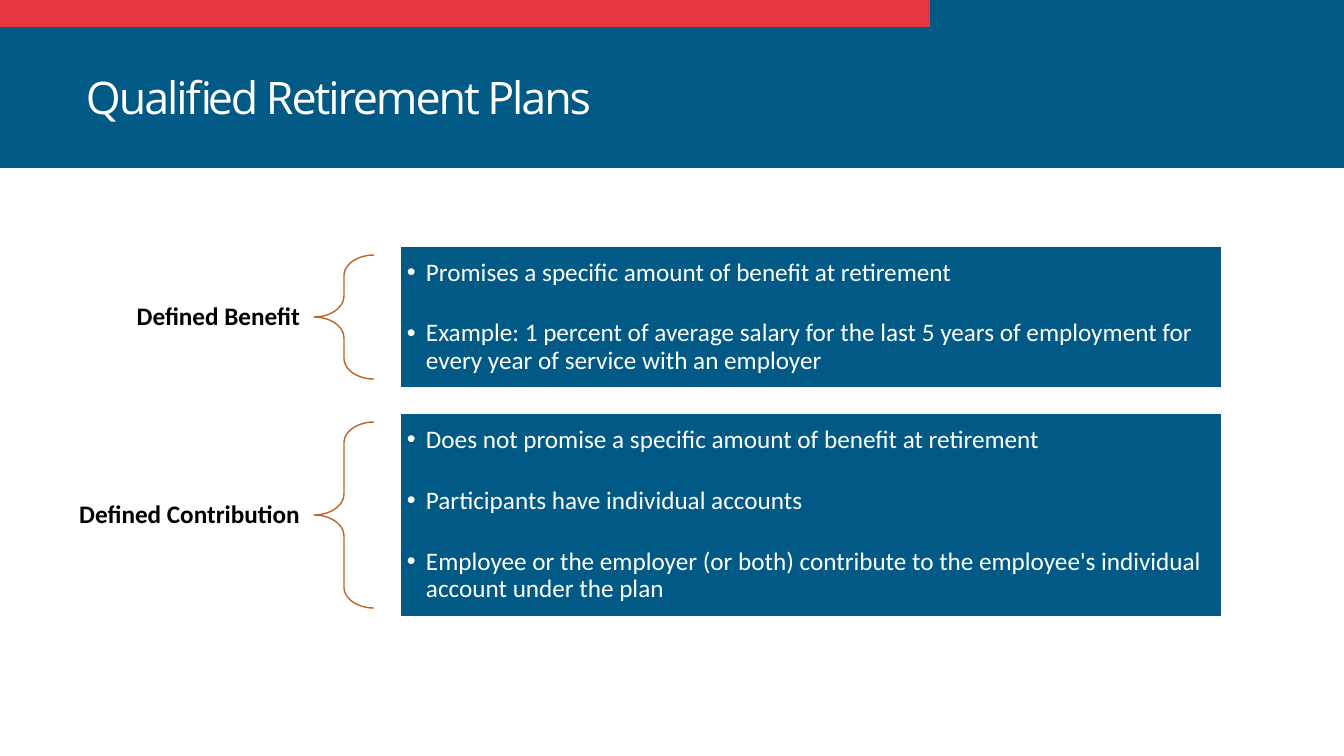
from lxml import etree
from pptx import Presentation
from pptx.dml.color import RGBColor
from pptx.enum.shapes import MSO_SHAPE
from pptx.enum.text import MSO_ANCHOR, MSO_AUTO_SIZE, PP_ALIGN
from pptx.oxml.ns import qn
from pptx.util import Pt

HEADING = "Qualified Retirement Plans"
PLANS = [
    {"name": "Defined Benefit", "top": 246, "height": 142, "points": [
        "Promises a specific amount of benefit at retirement",
        "Example: 1 percent of average salary for the last 5 years of "
        "employment for every year of service with an employer"]},
    {"name": "Defined Contribution", "top": 413, "height": 204, "points": [
        "Does not promise a specific amount of benefit at retirement",
        "Participants have individual accounts",
        "Employee or the employer (or both) contribute to the employee's "
        "individual account under the plan"]},
]
COLORS = {"blue": "005A85", "red": "E63641", "brown": "BE6427",
          "white": "FFFFFF", "black": "000000"}
BANDS = [("blue", 1344, 168), ("red", 930, 27)]
HEADING_FONT = {"name": "Open Sans", "size": Pt(32), "bold": False}
LABEL_FONT = {"name": "Calibri", "size": Pt(18), "bold": True}
POINT_FONT = {"name": "Calibri", "size": Pt(18), "bold": False}
LABEL_LEFT, LABEL_WIDTH = 12, 302
BRACE_WIDTH, BRACE_INSET = 60, 9
PANEL_LEFT, PANEL_WIDTH = 400, 822
BULLET_INDENT = 19
POINT_GAP = Pt(24)


def px(length):
    return round(length * 914400 / 100.8)


def rgb(name):
    return RGBColor.from_string(COLORS[name])


def place(shape, left, top, width, height):
    shape.left, shape.top = px(left), px(top)
    shape.width, shape.height = px(width), px(height)


def format_frame(frame, side, end):
    """Centre the text vertically, with side and end insets in px."""
    values = {"word_wrap": True, "auto_size": MSO_AUTO_SIZE.NONE,
              "vertical_anchor": MSO_ANCHOR.MIDDLE,
              "margin_left": px(side), "margin_right": px(side),
              "margin_top": px(end), "margin_bottom": px(end)}
    for attribute, value in values.items():
        setattr(frame, attribute, value)


def format_paragraph(paragraph, font, color, align, before=Pt(0)):
    values = {"alignment": align, "line_spacing": 0.9,
              "space_before": before, "space_after": Pt(0)}
    for attribute, value in values.items():
        setattr(paragraph, attribute, value)
    for run in paragraph.runs:
        for attribute, value in font.items():
            setattr(run.font, attribute, value)
        run.font.color.rgb = rgb(color)


def add_bullet(paragraph):
    properties = paragraph._p.get_or_add_pPr()
    properties.set("marL", str(px(BULLET_INDENT)))
    properties.set("indent", str(-px(BULLET_INDENT)))
    etree.SubElement(properties, qn("a:buChar")).set("char", "•")


def add_bands(slide):
    for depth, (color, width, height) in enumerate(BANDS):
        band = slide.shapes.add_shape(MSO_SHAPE.RECTANGLE, 0, 0, px(width), px(height))
        band.shadow.inherit = False
        band.fill.solid()
        band.fill.fore_color.rgb = rgb(color)
        band.line.fill.background()
        slide.shapes._spTree.insert(2 + depth, band._element)


def fill_heading(heading):
    place(heading, 76, 27, 714, 146)
    heading.text_frame.text = HEADING
    format_frame(heading.text_frame, 10, 5)
    paragraph = heading.text_frame.paragraphs[0]
    format_paragraph(paragraph, HEADING_FONT, "white", PP_ALIGN.LEFT)
    paragraph.runs[0].font._element.set("spc", "-150")


def add_label(slide, plan):
    label = slide.shapes.add_textbox(0, 0, 0, 0)
    place(label, LABEL_LEFT, plan["top"], LABEL_WIDTH, plan["height"])
    label.text_frame.text = plan["name"]
    format_frame(label.text_frame, 14, 5)
    format_paragraph(label.text_frame.paragraphs[0], LABEL_FONT, "black", PP_ALIGN.RIGHT)


def add_brace(slide, plan):
    brace = slide.shapes.add_shape(MSO_SHAPE.LEFT_BRACE, 0, 0, 0, 0)
    place(brace, LABEL_LEFT + LABEL_WIDTH, plan["top"] + BRACE_INSET,
          BRACE_WIDTH, plan["height"] - 2 * BRACE_INSET)
    brace.adjustments[0], brace.adjustments[1] = 0.35, 0.5
    brace.shadow.inherit = False
    brace.fill.background()
    brace.line.color.rgb = rgb("brown")
    brace.line.width = Pt(1)


def fill_panel(panel, plan):
    place(panel, PANEL_LEFT, plan["top"], PANEL_WIDTH, plan["height"])
    panel.fill.solid()
    panel.fill.fore_color.rgb = rgb("blue")
    panel.line.color.rgb = rgb("white")
    panel.line.width = Pt(1)
    panel.text_frame.text = "\n".join(plan["points"])
    format_frame(panel.text_frame, 7, 7)
    for index, point in enumerate(panel.text_frame.paragraphs):
        add_bullet(point)
        format_paragraph(point, POINT_FONT, "white", PP_ALIGN.LEFT,
                         POINT_GAP if index else Pt(0))


def main():
    deck = Presentation()
    deck.slide_width, deck.slide_height = px(1344), px(756)
    slide = deck.slides.add_slide(deck.slide_layouts.get_by_name("Two Content"))
    heading, *panels = slide.placeholders
    add_bands(slide)
    fill_heading(heading)
    for panel, plan in zip(panels, PLANS):
        add_label(slide, plan)
        add_brace(slide, plan)
        fill_panel(panel, plan)
    deck.save("out.pptx")


if __name__ == "__main__":
    main()
